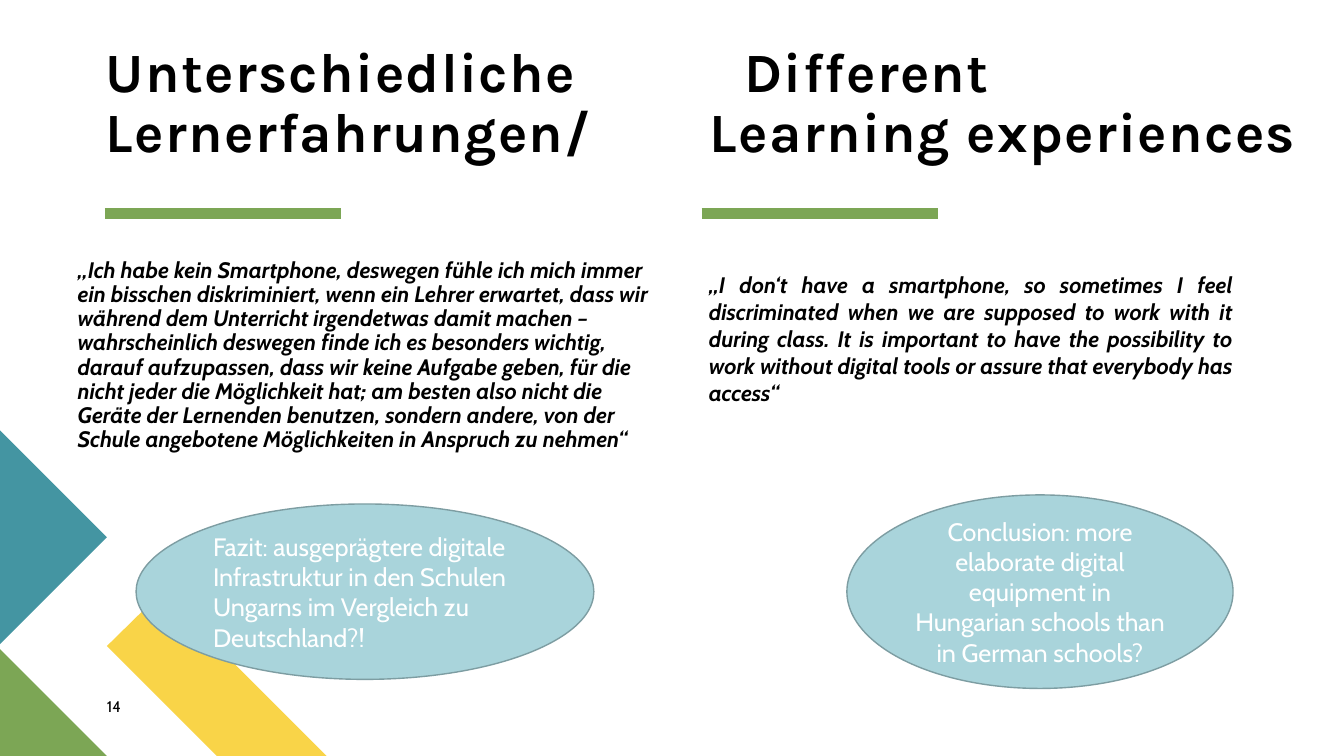
from lxml import etree
from pptx import Presentation
from pptx.dml.color import RGBColor
from pptx.enum.shapes import MSO_CONNECTOR, MSO_SHAPE
from pptx.enum.text import MSO_ANCHOR, MSO_AUTO_SIZE, PP_ALIGN
from pptx.oxml.ns import qn
from pptx.util import Inches, Pt

STRAIGHT = MSO_CONNECTOR.STRAIGHT
OVAL = MSO_SHAPE.OVAL
TOP, MIDDLE, BOTTOM = MSO_ANCHOR.TOP, MSO_ANCHOR.MIDDLE, MSO_ANCHOR.BOTTOM
NO_AUTOFIT = MSO_AUTO_SIZE.NONE
LEFT, CENTER, JUSTIFY = PP_ALIGN.LEFT, PP_ALIGN.CENTER, PP_ALIGN.JUSTIFY

COLORS = {
    "text": "000000",
    "light": "FFFFFF",
    "yellow": "F9D448",
    "green": "7CA655",
    "teal": "4495A2",
    "bubble": "A9D4DB",
    "bubble_edge": "7D9DA2",
}


def color(name):
    return RGBColor.from_string(COLORS[name])


def place(region, box):
    region.left, region.top, region.width, region.height = map(Inches, box)


def prepare_frame(frame, anchor, inset=True):
    frame.word_wrap = True
    frame.auto_size = NO_AUTOFIT
    frame.vertical_anchor = anchor
    if not inset:
        frame.margin_left = frame.margin_right = 0
        frame.margin_top = frame.margin_bottom = 0


def write(paragraph, text, size, font="Cabin", tone="text", bold=False, italic=False):
    run = paragraph.add_run()
    run.text = text
    run.font.name = font
    run.font.size = Pt(size)
    run.font.bold = bold
    run.font.italic = italic
    run.font.color.rgb = color(tone)
    return run


def add_corner(slide, points, tone):
    start, *rest = [(Inches(x), Inches(y)) for x, y in points]
    builder = slide.shapes.build_freeform(*start, scale=1.0)
    builder.add_line_segments(rest, close=True)
    corner = builder.convert_to_shape()
    corner.shadow.inherit = False
    corner.fill.solid()
    corner.fill.fore_color.rgb = color(tone)
    corner.line.fill.background()


def add_corners(slide, unit=1.06, bottom=7.5):
    add_corner(slide, [(3.24, bottom), (2.15, bottom), (unit, 6.41), (1.61, 5.87)], "yellow")
    add_corner(slide, [(0, bottom - unit), (unit, bottom), (0, bottom)], "green")
    add_corner(slide, [(0, 4.27), (unit, 4.27 + unit), (0, 4.27 + 2 * unit)], "teal")


def add_rule(slide, left, top, width):
    rule = slide.shapes.add_connector(
        STRAIGHT, Inches(left), Inches(top), Inches(left + width), Inches(top))
    rule.line.color.rgb = color("green")
    rule.line.width = Pt(8)
    etree.SubElement(rule._element.spPr, qn("a:effectLst"))


def fill_title(title, box, lines):
    place(title, box)
    frame = title.text_frame
    prepare_frame(frame, BOTTOM, inset=False)
    for index, (german, english, english_left) in enumerate(lines):
        line = frame.add_paragraph() if index else frame.paragraphs[0]
        line.alignment = LEFT
        line.line_spacing = 0.9
        line.space_before = Pt(0)
        stops = etree.SubElement(line._p.get_or_add_pPr(), qn("a:tabLst"))
        etree.SubElement(stops, qn("a:tab"), pos=str(Inches(english_left - box[0])), algn="l")
        run = write(line, f"{german}\t{english}", 39.6, "Karla", bold=True)
        run._r.get_or_add_rPr().set("spc", "100")


def fill_quote(quote, box, text, alignment, spacing):
    place(quote, box)
    prepare_frame(quote.text_frame, TOP, inset=False)
    paragraph = quote.text_frame.paragraphs[0]
    paragraph.alignment = alignment
    paragraph.line_spacing = spacing
    paragraph.space_before = Pt(10)
    properties = paragraph._p.get_or_add_pPr()
    properties.set("marL", "0")
    properties.set("indent", "0")
    etree.SubElement(properties, qn("a:buNone"))
    write(paragraph, text, 16, bold=True, italic=True)


def add_bubble(slide, box, text, alignment):
    bubble = slide.shapes.add_shape(OVAL, *map(Inches, box))
    bubble.shadow.inherit = False
    bubble.fill.solid()
    bubble.fill.fore_color.rgb = color("bubble")
    bubble.line.color.rgb = color("bubble_edge")
    bubble.line.width = Pt(1)
    prepare_frame(bubble.text_frame, MIDDLE)
    paragraph = bubble.text_frame.paragraphs[0]
    paragraph.alignment = alignment
    write(paragraph, text, 18, tone="light")


def add_page_number(slide, box, number):
    page = slide.shapes.add_textbox(*map(Inches, box))
    prepare_frame(page.text_frame, TOP, inset=False)
    write(page.text_frame.paragraphs[0], number, 11)


def build_comparison(deck):
    slide = deck.slides.add_slide(deck.slide_layouts[3])
    title, german_quote, english_quote = slide.placeholders
    add_corners(slide)
    for left in (1.04, 6.96):
        add_rule(slide, left, 2.12, 2.34)
    fill_title(title, (1.05, 0.96, 11.95, 0.67), [
        ("Unterschiedliche", "Different", 7.38),
        ("Lernerfahrungen/", "Learning experiences", 7.04),
    ])
    fill_quote(
        german_quote, (0.77, 2.57, 5.8, 2.12),
        "„Ich habe kein Smartphone, deswegen fühle ich mich immer ein bisschen "
        "diskriminiert, wenn ein Lehrer erwartet, dass wir während dem Unterricht "
        "irgendetwas damit machen – wahrscheinlich deswegen finde ich es besonders "
        "wichtig, darauf aufzupassen, dass wir keine Aufgabe geben, für die nicht "
        "jeder die Möglichkeit hat; am besten also nicht die Geräte der Lernenden "
        "benutzen, sondern andere, von der Schule angebotene Möglichkeiten in "
        "Anspruch zu nehmen“", LEFT, 0.9)
    fill_quote(
        english_quote, (7.03, 2.69, 5.2, 2.12),
        "„I don‘t have a smartphone, so sometimes I feel discriminated when we are "
        "supposed to work with it during class. It is important to have the "
        "possibility to work without digital tools or assure that everybody has "
        "access“", JUSTIFY, 1.0)
    add_page_number(slide, (1.06, 6.92, 0.57, 0.27), "14")
    add_bubble(
        slide, (8.4, 4.91, 3.83, 1.92),
        "Conclusion: more elaborate digital equipment in Hungarian schools than in "
        "German schools?", CENTER)
    add_bubble(
        slide, (1.35, 5, 4.54, 1.74),
        "Fazit: ausgeprägtere digitale Infrastruktur in den Schulen Ungarns im "
        "Vergleich zu Deutschland?!", LEFT)


def main():
    deck = Presentation()
    deck.slide_width, deck.slide_height = Inches(13.33), Inches(7.5)
    build_comparison(deck)
    deck.save("out.pptx")


if __name__ == "__main__":
    main()
